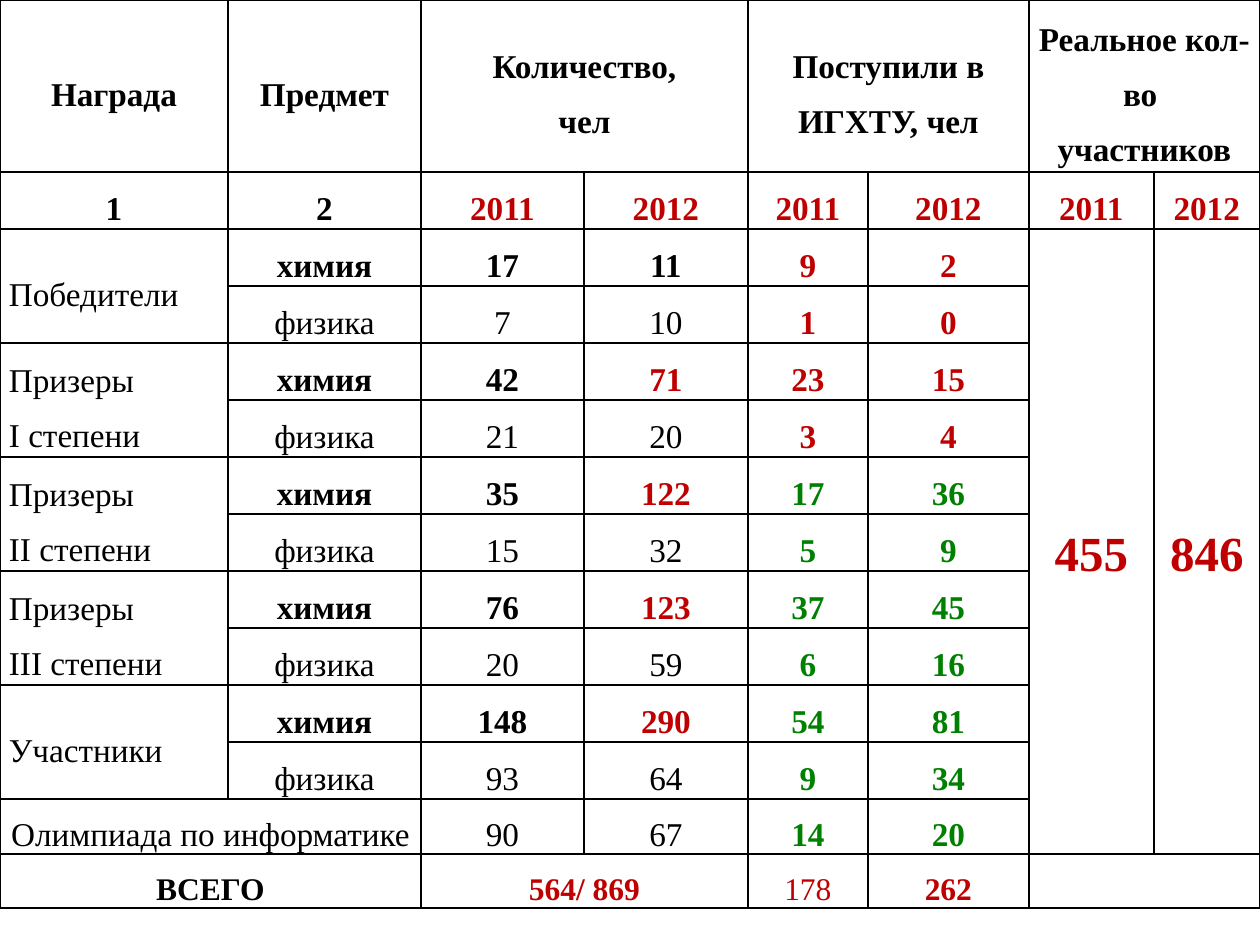
from lxml import etree
from pptx import Presentation
from pptx.dml.color import RGBColor
from pptx.enum.text import MSO_ANCHOR, PP_ALIGN
from pptx.oxml.ns import qn
from pptx.util import Emu, Pt

LEFT, CENTER = PP_ALIGN.LEFT, PP_ALIGN.CENTER
MIDDLE = MSO_ANCHOR.MIDDLE
PX = 914400 / 126
COLORS = {"black": "000000", "red": "C00000", "green": "008000"}
FONT = "Times New Roman"


def px(length):
    return Emu(round(length * PX))


def write_cell(row, column, text, color="black", bold=True, size=19, align=CENTER):
    frame = table.cell(row, column).text_frame
    frame.text = text
    font_format = {"name": FONT, "size": Pt(size), "bold": bold}
    for paragraph in frame.paragraphs:
        paragraph.alignment = align
        paragraph.line_spacing = 1.5
        for run in paragraph.runs:
            for name, value in font_format.items():
                setattr(run.font, name, value)
            run.font.color.rgb = RGBColor.from_string(COLORS[color])


presentation = Presentation()
presentation.slide_width, presentation.slide_height = px(1260), px(945)
slide = presentation.slides.add_slide(presentation.slide_layouts[6])

# Table grid
column_widths = [228, 193, 163, 164, 120, 161, 125, 106]
row_heights = [172] + [57] * 11 + [42, 54]
shape = slide.shapes.add_table(len(row_heights), len(column_widths), 0, 0,
                               px(sum(column_widths)), px(sum(row_heights)))
table = shape.table
table.first_row = table.horz_banding = False
for column, width in zip(table.columns, column_widths):
    column.width = px(width)
for row, height in zip(table.rows, row_heights):
    row.height = px(height)

# Cell margins, borders and empty fill
cell_format = {"margin_left": px(9), "margin_right": px(9), "margin_top": 0,
               "margin_bottom": 0, "vertical_anchor": MIDDLE}
for row in table.rows:
    for cell in row.cells:
        for name, value in cell_format.items():
            setattr(cell, name, value)
        properties = cell._tc.get_or_add_tcPr()
        for side in ("a:lnL", "a:lnR", "a:lnT", "a:lnB"):
            line = etree.SubElement(properties, qn(side), w=str(Pt(1)))
            fill = etree.SubElement(line, qn("a:solidFill"))
            etree.SubElement(fill, qn("a:srgbClr"), val=COLORS["black"])
        cell.fill.background()

# Merged areas: first row, first column, last row, last column
merges = [(0, column, 0, column + 1) for column in (2, 4, 6)]
merges += [(row, 0, row + 1, 0) for row in range(2, 12, 2)]
merges += [(2, 6, 12, 6), (2, 7, 12, 7), (12, 0, 12, 1),
           (13, 0, 13, 1), (13, 2, 13, 3), (13, 6, 13, 7)]
for top, left, bottom, right in merges:
    table.cell(top, left).merge(table.cell(bottom, right))

# Header rows
headings = {0: "Награда", 1: "Предмет", 2: "Количество,\nчел",
            4: "Поступили в ИГХТУ, чел", 6: "Реальное кол-во \nучастников"}
for column, text in headings.items():
    write_cell(0, column, text)
for column in range(2):
    write_cell(1, column, str(column + 1))
for column in range(2, 8):
    write_cell(1, column, str(2011 + column % 2), "red")

# Awards: chemistry in bold, physics in regular, entrants in colour
awards = [
    ("Победители", (17, 11, 9, 2), (7, 10, 1, 0)),
    ("Призеры\nI степени", (42, 71, 23, 15), (21, 20, 3, 4)),
    ("Призеры\nII степени", (35, 122, 17, 36), (15, 32, 5, 9)),
    ("Призеры\nIII степени", (76, 123, 37, 45), (20, 59, 6, 16)),
    ("Участники", (148, 290, 54, 81), (93, 64, 9, 34)),
]
for index, (award, chemistry, physics) in enumerate(awards):
    first_row = 2 + 2 * index
    entrant_color = "red" if index < 2 else "green"
    write_cell(first_row, 0, award, bold=False, align=LEFT)
    subjects = [("химия", chemistry, True), ("физика", physics, False)]
    for row, (subject, counts, bold) in enumerate(subjects, first_row):
        growth_color = "red" if bold and index > 0 else "black"
        colors = ["black", growth_color, entrant_color, entrant_color]
        write_cell(row, 1, subject, bold=bold)
        for column, (count, color) in enumerate(zip(counts, colors), 2):
            write_cell(row, column, str(count), color, bold or column > 3)

# Real number of participants
write_cell(2, 6, "455", "red", size=28)
write_cell(2, 7, "846", "red", size=28)

# Informatics olympiad
write_cell(12, 0, "Олимпиада по информатике", bold=False)
for column, count in enumerate((90, 67, 14, 20), 2):
    entrants = column > 3
    write_cell(12, column, str(count), "green" if entrants else "black", entrants)

# Totals
write_cell(13, 0, "ВСЕГО", size=18)
write_cell(13, 2, "564/ 869", "red", size=18)
write_cell(13, 4, "178", "red", bold=False, size=18)
write_cell(13, 5, "262", "red", size=18)

presentation.save("out.pptx")
